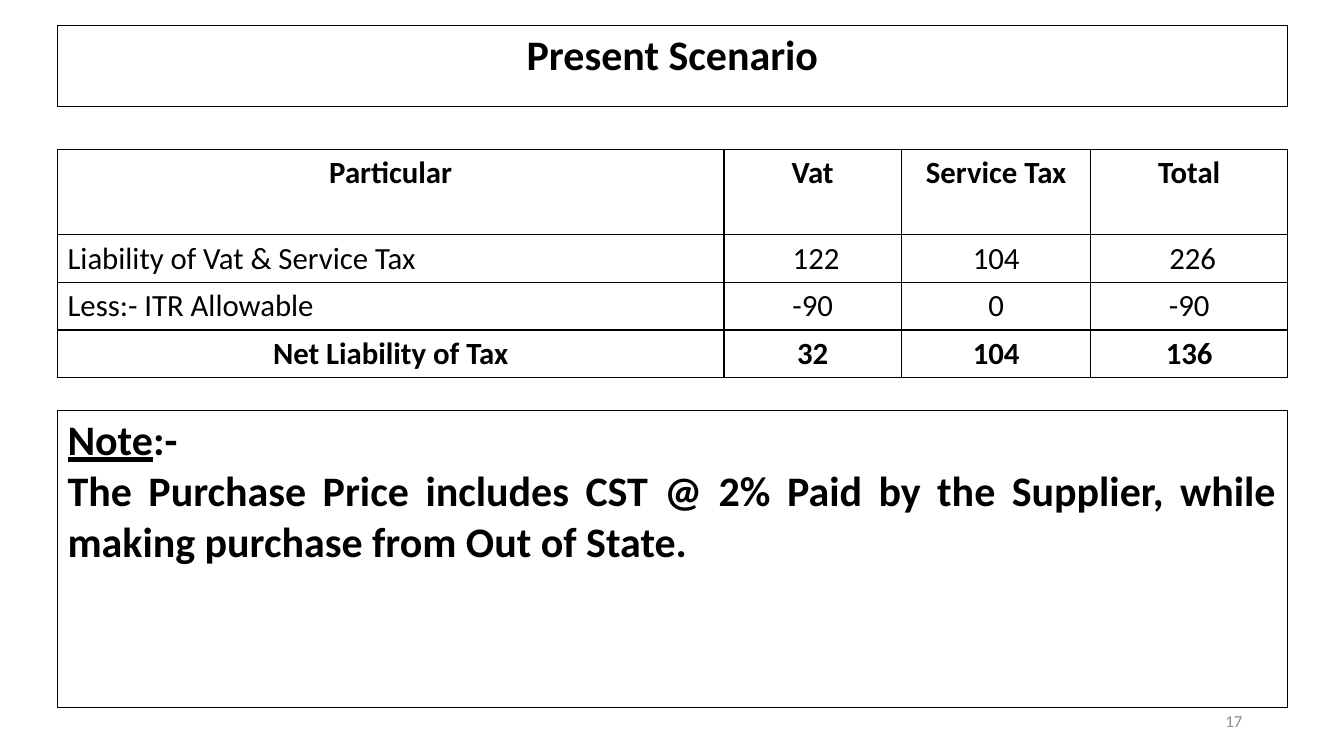
from dataclasses import dataclass

import lxml.etree
import pptx
import pptx.dml.color
import pptx.enum.text
import pptx.oxml.ns
import pptx.util

Inches = pptx.util.Inches
Align = pptx.enum.text.PP_ALIGN


@dataclass(frozen=True)
class Theme:
    font: str = "Calibri"
    ink: str = "000000"
    muted: str = "8C8C8C"
    heading: int = 30
    table: int = 22
    footer: int = 12
    border: int = 1


@dataclass(frozen=True)
class Span:
    text: str
    size: int
    bold: bool = False
    underline: bool = False
    color: str = Theme.ink


@dataclass(frozen=True)
class Line:
    spans: tuple[Span, ...]
    align: Align = Align.CENTER


@dataclass(frozen=True)
class Grid:
    top: float
    widths: tuple[float, ...]
    heights: tuple[float, ...]
    rows: list[list[list[Line]]]


THEME = Theme()
LEFT, WIDTH = 0.57, 12.2
TAX_ROWS = [
    ("Particular", "Vat", "Service Tax", "Total"),
    ("Liability of Vat & Service Tax", " 122", "104", " 226"),
    ("Less:- ITR Allowable", "-90", "0", "-90"),
    ("Net Liability of Tax", "32", "104", "136"),
]


def write_lines(frame, lines: list[Line]) -> None:
    for index, line in enumerate(lines):
        para = frame.paragraphs[0] if index == 0 else frame.add_paragraph()
        para.alignment = line.align
        for span in line.spans:
            run = para.add_run()
            run.text = span.text
            formats = {
                "name": THEME.font,
                "size": pptx.util.Pt(span.size),
                "bold": span.bold,
                "underline": span.underline,
            }
            for name, value in formats.items():
                setattr(run.font, name, value)
            run.font.color.rgb = pptx.dml.color.RGBColor.from_string(span.color)


def outline_cell(cell) -> None:
    cell.fill.background()
    properties = cell._tc.get_or_add_tcPr()
    qn = pptx.oxml.ns.qn
    for index, side in enumerate(("lnL", "lnR", "lnT", "lnB")):
        edge = lxml.etree.Element(qn(f"a:{side}"), w=str(pptx.util.Pt(THEME.border)))
        fill = lxml.etree.SubElement(edge, qn("a:solidFill"))
        lxml.etree.SubElement(fill, qn("a:srgbClr"), val=THEME.ink)
        properties.insert(index, edge)


def add_grid(page, grid: Grid) -> None:
    table = page.shapes.add_table(
        len(grid.heights), len(grid.widths), Inches(LEFT), Inches(grid.top),
        Inches(WIDTH), Inches(sum(grid.heights)),
    ).table
    table.first_row = table.horz_banding = False
    for column, width in zip(table.columns, grid.widths):
        column.width = Inches(width)
    for row, height, contents in zip(table.rows, grid.heights, grid.rows):
        row.height = Inches(height)
        for cell, lines in zip(row.cells, contents):
            outline_cell(cell)
            write_lines(cell.text_frame, lines)


def tax_grid() -> Grid:
    last = len(TAX_ROWS) - 1
    rows = []
    for row, texts in enumerate(TAX_ROWS):
        bold = row in (0, last)
        rows.append([
            [Line((Span(text, THEME.table, bold),),
                  Align.CENTER if bold or column else Align.LEFT)]
            for column, text in enumerate(texts)
        ])
    return Grid(1.48, (6.61, 1.76, 1.88, 1.95), (0.85,) + (0.47,) * last, rows)


def framed_text(top: float, height: float, lines: list[Line]) -> Grid:
    """Describe a full-width table of one cell."""
    return Grid(top, (WIDTH,), (height,), [[lines]])


def note_grid() -> Grid:
    size = THEME.heading
    return framed_text(4.07, 2.95, [
        Line((Span("Note", size, True, True), Span(":-", size, True)), Align.JUSTIFY),
        Line((Span("The Purchase Price includes CST @ 2% Paid by the Supplier, "
                   "while making purchase from Out of State.", size, True),),
             Align.JUSTIFY),
    ])


def title_grid() -> Grid:
    title = Span("Present Scenario", THEME.heading, True)
    return framed_text(0.25, 0.81, [Line((title,))])


def add_page_number(page) -> None:
    box = page.shapes.add_textbox(Inches(9.42), Inches(6.95), Inches(3), Inches(0.4))
    formats = {
        "word_wrap": True,
        "vertical_anchor": pptx.enum.text.MSO_ANCHOR.MIDDLE,
    }
    for name, value in formats.items():
        setattr(box.text_frame, name, value)
    number = Span("17", THEME.footer, color=THEME.muted)
    write_lines(box.text_frame, [Line((number,), Align.RIGHT)])


def main() -> None:
    deck = pptx.Presentation()
    deck.slide_width, deck.slide_height = Inches(13.33), Inches(7.5)
    page = deck.slides.add_slide(deck.slide_layouts.get_by_name("Blank"))
    for grid in (tax_grid(), note_grid(), title_grid()):
        add_grid(page, grid)
    add_page_number(page)
    deck.save("out.pptx")


if __name__ == "__main__":
    main()
